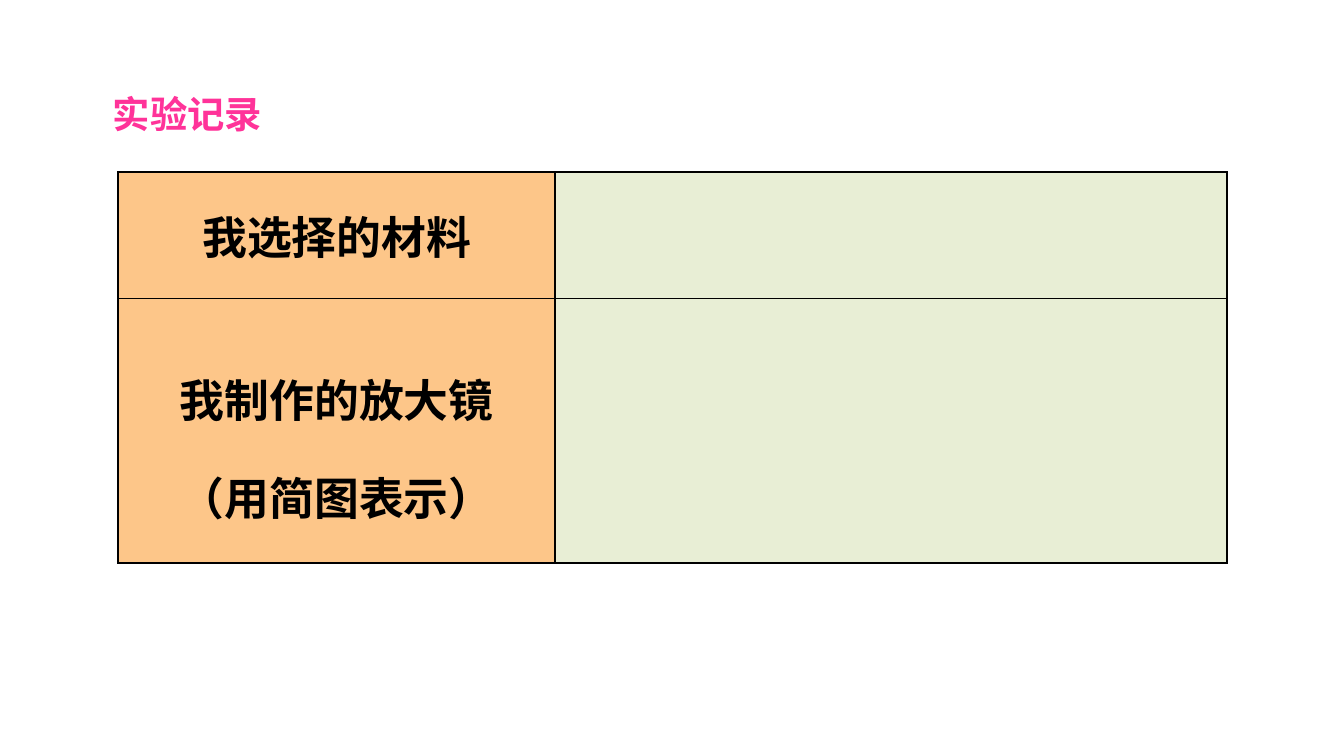
from dataclasses import dataclass

from lxml import etree
from pptx import Presentation
from pptx import util as u
from pptx.dml.color import RGBColor
from pptx.enum import text as t
from pptx.oxml import ns

FONT = "Noto Sans CJK SC"
PINK = RGBColor(0xFF, 0x33, 0x99)
BLACK = RGBColor(0, 0, 0)
PEACH = RGBColor(0xFD, 0xC6, 0x89)
GREEN = RGBColor(0xE8, 0xEE, 0xD5)
WIDE = 10
HIGH = WIDE * 9 / 16
COLS = (3.25, 5)


@dataclass
class Row:
    height: float
    lines: tuple[str, ...]
    space: float


ROWS = (
    Row(0.94, ("我选择的材料",), 1),
    Row(1.97, ("我制作的放大镜", "（用简图表示）"), 1.5),
)


def add_run(para, words: str, size: int, color: RGBColor) -> None:
    run = para.add_run()
    run.text = words
    font = run.font
    font.name, font.size, font.bold = FONT, u.Pt(size), True
    font.color.rgb = color
    etree.SubElement(run._r.get_or_add_rPr(), ns.qn("a:ea"), typeface=FONT)


def add_edges(cell, color: RGBColor, width: float) -> None:
    props = cell._tc.get_or_add_tcPr()
    for i, side in enumerate("LRTB"):
        line = etree.Element(ns.qn(f"a:ln{side}"), w=str(u.Pt(width)))
        fill = etree.SubElement(line, ns.qn("a:solidFill"))
        etree.SubElement(fill, ns.qn("a:srgbClr"), val=str(color))
        props.insert(i, line)


def add_title(slide, words: str) -> None:
    box = slide.shapes.add_textbox(
        u.Inches(0.74), u.Inches(0.63), u.Inches(1.38), u.Inches(0.44))
    frame = box.text_frame
    frame.word_wrap = True
    frame.auto_size = t.MSO_AUTO_SIZE.SHAPE_TO_FIT_TEXT
    add_run(frame.paragraphs[0], words, 20, PINK)


def fill_label(cell, row: Row) -> None:
    cell.vertical_anchor = t.MSO_ANCHOR.MIDDLE
    frame = cell.text_frame
    for i, words in enumerate(row.lines):
        para = frame.add_paragraph() if i else frame.paragraphs[0]
        para.alignment = t.PP_ALIGN.CENTER
        para.line_spacing = row.space
        add_run(para, words, 24, BLACK)


def add_grid(slide, rows: tuple[Row, ...]) -> None:
    high = sum(row.height for row in rows)
    grid = slide.shapes.add_table(
        len(rows), len(COLS), u.Inches(0.88), u.Inches(1.28),
        u.Inches(sum(COLS)), u.Inches(high)).table
    grid.first_row = grid.horz_banding = False
    for col, width in zip(grid.columns, COLS):
        col.width = u.Inches(width)
    for i, row in enumerate(rows):
        grid.rows[i].height = u.Inches(row.height)
        for j, color in enumerate((PEACH, GREEN)):
            cell = grid.cell(i, j)
            cell.fill.solid()
            cell.fill.fore_color.rgb = color
            add_edges(cell, BLACK, 1)
        fill_label(grid.cell(i, 0), row)


def main() -> None:
    deck = Presentation()
    deck.slide_width, deck.slide_height = u.Inches(WIDE), u.Inches(HIGH)
    slide = deck.slides.add_slide(deck.slide_layouts[6])
    add_title(slide, "实验记录")
    add_grid(slide, ROWS)
    deck.save("out.pptx")


if __name__ == "__main__":
    main()
